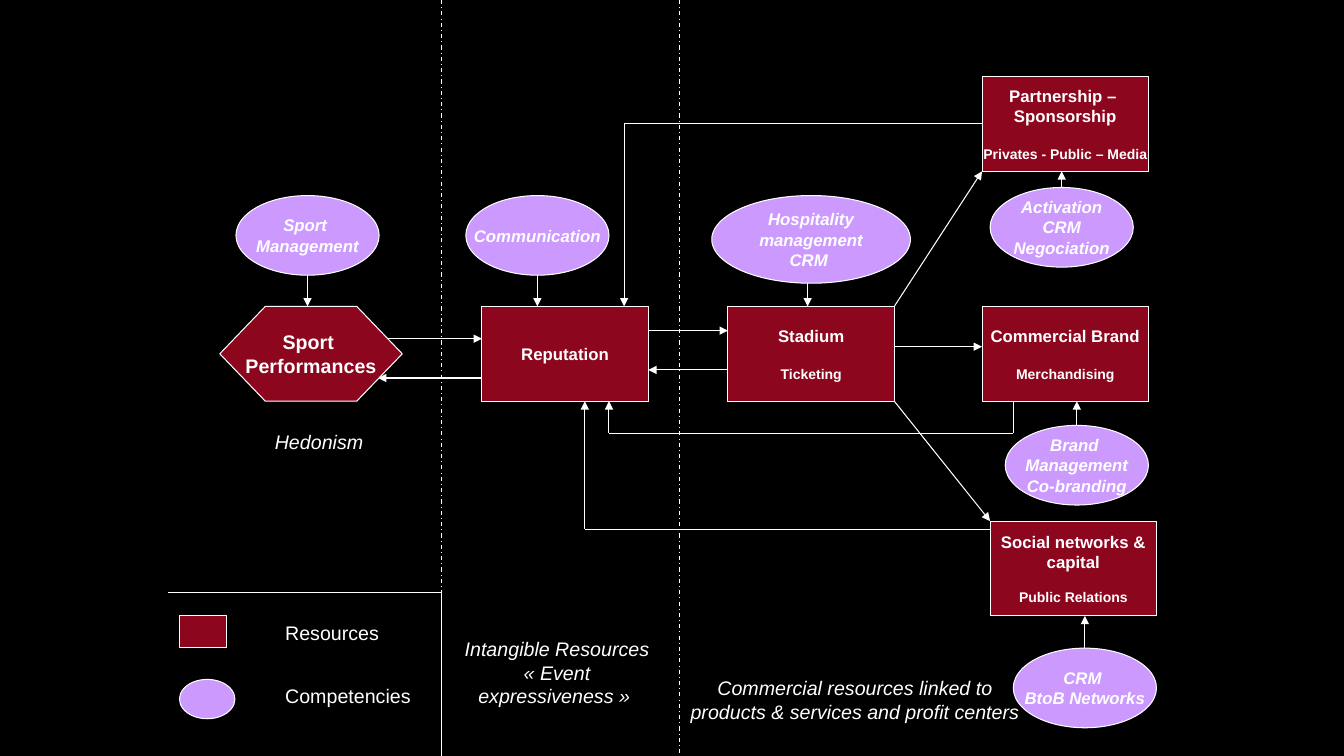
from lxml import etree
from pptx import Presentation
from pptx import util as u
from pptx.dml.color import RGBColor
from pptx.enum import dml, shapes, text
from pptx.oxml.ns import qn

WIDTH, HEIGHT = 13.33, 7.5
BLACK, WHITE, RED, LILAC = "000000", "FFFFFF", "8C061E", "CC99FF"
RECT = shapes.MSO_SHAPE.RECTANGLE
OVAL = shapes.MSO_SHAPE.OVAL
CENTER = text.PP_ALIGN.CENTER
RESOURCE_W, RESOURCE_H = 1.65, 0.94
OVAL_W, OVAL_H = 1.42, 0.79
ROW, ROW_END = 3.04, 3.98
DIVIDERS = 4.38, 6.74


def color(value):
    return RGBColor.from_string(value)


def inches(*lengths):
    return [u.Inches(length) for length in lengths]


def write(frame, lines, size=12, bold=False, italic=False, align=CENTER, small=None, gap=0):
    """Write the lines, then an optional 10 pt line set off by a gap in points."""
    entries = [(line, size, 0) for line in lines]
    if small:
        entries.append((small, 10, gap))
    for index, (line, points, before) in enumerate(entries):
        para = frame.paragraphs[0] if index == 0 else frame.add_paragraph()
        para.alignment = align
        if before:
            para.space_before = u.Pt(before)
        span = para.add_run()
        span.text = line
        font = span.font
        font.name, font.size = "Arial", u.Pt(points)
        font.bold, font.italic = bold, italic
        font.color.rgb = color(WHITE)


def label(page, box, content, **style):
    frame = page.shapes.add_textbox(*inches(*box)).text_frame
    frame.word_wrap = True
    write(frame, [content], size=14, **style)


def node(page, kind, box, fill, lines=(), **style):
    shape = page.shapes.add_shape(kind, *inches(*box))
    shape.shadow.inherit = False
    shape.fill.solid()
    shape.fill.fore_color.rgb = color(fill)
    shape.line.color.rgb = color(WHITE)
    shape.line.width = u.Pt(0.75)
    shape.text_frame.word_wrap = False
    shape.text_frame.vertical_anchor = text.MSO_ANCHOR.MIDDLE
    write(shape.text_frame, lines, bold=True, **style)
    return shape


def line(page, start, end, arrow=False, dash=None):
    connector = page.shapes.add_connector(
        shapes.MSO_CONNECTOR.STRAIGHT, *inches(*start, *end))
    connector.line.color.rgb = color(WHITE)
    connector.line.width = u.Pt(0.75)
    if dash:
        connector.line.dash_style = dash
    properties = connector.line._get_or_add_ln()
    if arrow:
        etree.SubElement(properties, qn("a:tailEnd"), type="triangle")
    etree.SubElement(connector._element.spPr, qn("a:effectLst"))
    return connector


def route(page, *points):
    """Join the points with lines, the last one an arrow; return the first."""
    last = len(points) - 2
    lines = [line(page, points[i], points[i + 1], arrow=i == last)
             for i in range(last + 1)]
    return lines[0]


def resource(page, left, top, *lines, **style):
    return node(page, RECT, (left, top, RESOURCE_W, RESOURCE_H), RED, lines, **style)


def competency(page, target, left, top, *lines, width=OVAL_W, height=OVAL_H, arrow_x=None):
    """Place an ellipse with an arrow to the resource above or below it."""
    oval = node(page, OVAL, (left, top, width, height), LILAC, lines, italic=True)
    x = arrow_x or left + width / 2
    if target.top.inches > top:
        line(page, (x, top + height), (x, target.top.inches), arrow=True)
    else:
        bottom = (target.top + target.height) / u.Inches(1)
        line(page, (x, top), (x, bottom), arrow=True).begin_connect(oval, 0)


def zones(page):
    for x in DIVIDERS:
        line(page, (x, 0), (x, HEIGHT), dash=dml.MSO_LINE.DASH_DOT)
    label(page, (2.18, 4.22, 1.97, 0.33), "Hedonism", italic=True)
    label(page, (4.46, 6.27, 2.13, 0.81),
          "Intangible Resources « Event expressiveness » ", italic=True)
    label(page, (6.67, 6.66, 3.62, 0.57),
          "Commercial resources linked to products & services and profit centers",
          italic=True)


def legend(page, left, top, right):
    line(page, (left, top), (right, top))
    line(page, (right, top), (right, HEIGHT))
    keys = [("Resources", RECT, RED, 0.47, 0.31),
            ("Competencies", OVAL, LILAC, 0.55, 0.39)]
    for index, (name, kind, fill, width, height) in enumerate(keys):
        y = top + 0.23 + 0.63 * index
        node(page, kind, (left + 0.11, y, width, height), fill)
        label(page, (left + 1.06, y, 1.5, 0.33), name, align=text.PP_ALIGN.LEFT)


def flows(page, partnership):
    for start, end in [
        ((3.83, 3.36), (4.78, 3.36)),
        ((4.78, 3.75), (3.75, 3.75)),
        ((6.43, 3.28), (7.22, 3.28)),
        ((7.22, 3.67), (6.43, 3.67)),
        ((8.87, 3.44), (9.74, 3.44)),
        ((8.87, ROW), (9.74, 1.7)),
        ((8.87, ROW_END), (9.82, 5.17)),
    ]:
        route(page, start, end)
    route(page, (9.74, 1.23), (6.19, 1.23), (6.19, ROW)).begin_connect(partnership, 1)
    route(page, (9.82, 5.25), (5.8, 5.25), (5.8, ROW_END))
    route(page, (10.05, ROW_END), (10.05, 4.3), (6.04, 4.3), (6.04, ROW_END))


def diagram(page):
    reputation = resource(page, 4.78, ROW, "Reputation")
    stadium = resource(page, 7.22, ROW, "Stadium", small="Ticketing", gap=13.8)
    partnership = resource(page, 9.74, 0.76, "Partnership – ", "Sponsorship",
                           small="Privates - Public – Media", gap=13.8)
    brand = resource(page, 9.74, ROW, "Commercial Brand", small="Merchandising", gap=13.8)
    networks = resource(page, 9.82, 5.17, "Social networks &", "capital",
                        small="Public Relations", gap=11.5)
    flows(page, partnership)
    sport = node(page, shapes.MSO_SHAPE.HEXAGON, (2.18, ROW, 1.81, RESOURCE_H), RED,
                 ["Sport ", "Performances"], size=14)
    sport.adjustments[0] = 0.48

    competency(page, sport, 2.34, 1.94, "Sport ", "Management")
    competency(page, reputation, 4.62, 1.94, "Communication")
    competency(page, stadium, 7.06, 1.94, "Hospitality", "management", "CRM ",
               width=1.97, height=0.87, arrow_x=8.01)
    competency(page, partnership, 9.82, 1.86, "Activation", "CRM", "Negociation")
    competency(page, brand, 9.97, 4.22, "Brand ", "Management", "Co-branding")
    competency(page, networks, 10.05, 6.43, "CRM ", "BtoB Networks")


def main():
    deck = Presentation()
    deck.slide_width, deck.slide_height = inches(WIDTH, HEIGHT)
    page = deck.slides.add_slide(deck.slide_layouts[6])
    page.background.fill.solid()
    page.background.fill.fore_color.rgb = color(BLACK)
    zones(page)
    diagram(page)
    legend(page, 1.67, 5.88, DIVIDERS[0])
    deck.save("out.pptx")


if __name__ == "__main__":
    main()
